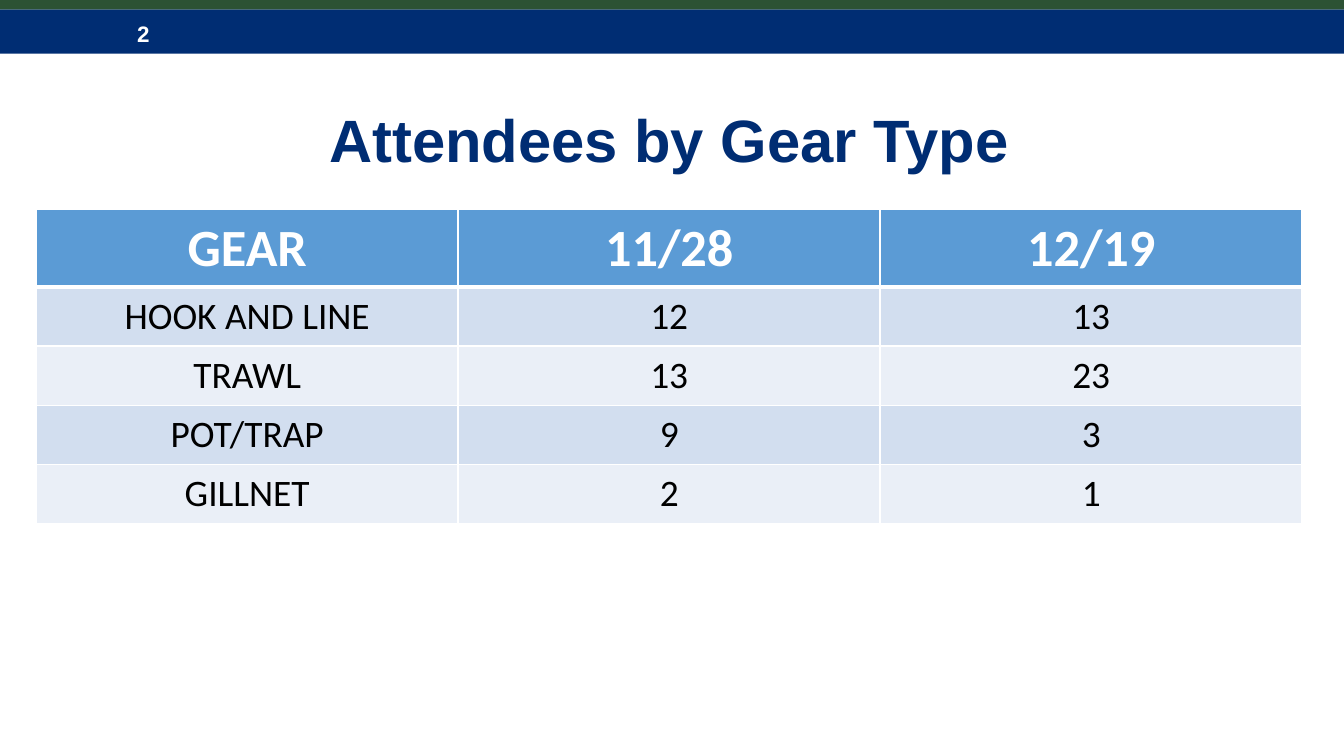
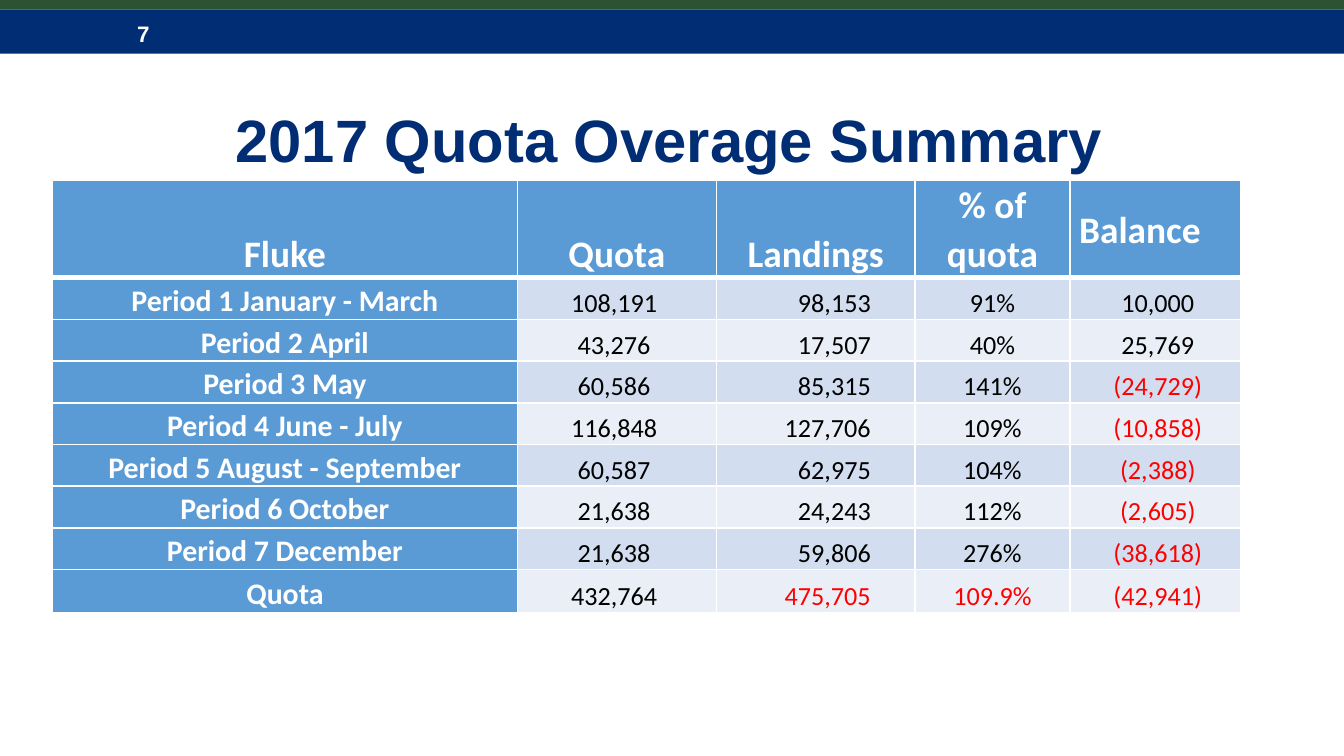
from lxml import etree
from pptx import Presentation
from pptx.dml.color import RGBColor
from pptx.enum import shapes, text
from pptx.oxml import ns
from pptx.util import Inches, Pt

COLORS = {
    "navy": "002D73",
    "green": "2C5234",
    "white": "FFFFFF",
    "black": "000000",
    "red": "FF0000",
    "header": "5B9BD5",
    "band_dark": "D2DEEF",
    "band_light": "EAEFF7",
}
CENTER, LEFT, RIGHT = text.PP_ALIGN.CENTER, text.PP_ALIGN.LEFT, text.PP_ALIGN.RIGHT
TOP, MIDDLE, BOTTOM = (text.MSO_ANCHOR.TOP, text.MSO_ANCHOR.MIDDLE,
                       text.MSO_ANCHOR.BOTTOM)

GEAR_ROWS = [
    ("GEAR", "11/28", "12/19"),
    ("HOOK AND LINE", "12", "13"),
    ("TRAWL", "13", "23"),
    ("POT/TRAP", "9", "3"),
    ("GILLNET", "2", "1"),
]
QUOTA_ROWS = [
    ("Fluke", "Quota", "Landings", "% of quota", "Balance"),
    ("Period 1 January - March", "108,191", "98,153", "91%", "10,000"),
    ("Period 2 April", "43,276", "17,507", "40%", "25,769"),
    ("Period 3 May", "60,586", "85,315", "141%", "(24,729)"),
    ("Period 4 June - July", "116,848", "127,706", "109%", "(10,858)"),
    ("Period 5 August - September", "60,587", "62,975", "104%", "(2,388)"),
    ("Period 6 October", "21,638", "24,243", "112%", "(2,605)"),
    ("Period 7 December", "21,638", "59,806", "276%", "(38,618)"),
    ("Quota", "432,764", "475,705", "109.9%", "(42,941)"),
]
# Left and right cell margins that line up the figures in each column
QUOTA_MARGINS = [(0.07, 0.07), (0.07, 0.11), (0.07, 0.33), (0.07, 0.07), (0.11, 0.07)]


def rgb(name):
    return RGBColor.from_string(COLORS[name])


def style_paragraph(para, font, size, color, bold, align, spacing=None):
    para.alignment = align
    if spacing:
        para.line_spacing = spacing
    for span in para.runs:
        span.font.name = font
        span.font.size = Pt(size)
        span.font.bold = bold
        span.font.color.rgb = rgb(color)


def set_margins(target, left, top, right, bottom):
    target.margin_left, target.margin_top = Inches(left), Inches(top)
    target.margin_right, target.margin_bottom = Inches(right), Inches(bottom)


def add_band(page, top, height, color):
    band = page.shapes.add_shape(shapes.MSO_SHAPE.RECTANGLE, 0, Inches(top),
                                 Inches(10), Inches(height))
    band.shadow.inherit = False
    band.fill.solid()
    band.fill.fore_color.rgb = rgb(color)
    band.line.fill.background()
    return band


def add_page(deck, title, number):
    page = deck.slides.add_slide(deck.slide_layouts[5])

    # Top bands with the page number
    frame = add_band(page, 0.07, 0.33, "navy").text_frame
    set_margins(frame, 1.02, 0.09, 0.3, 0.06)
    frame.vertical_anchor = MIDDLE
    frame.text = number
    style_paragraph(frame.paragraphs[0], "Arial", 12, "white", True, LEFT)
    add_band(page, 0, 0.07, "green")

    # Title
    box = page.shapes.title
    box.left, box.top = Inches(0.27), Inches(0.56)
    box.width, box.height = Inches(9.42), Inches(1.01)
    frame = box.text_frame
    set_margins(frame, 0, 0, 0, 0)
    frame.vertical_anchor = MIDDLE
    frame.text = title
    style_paragraph(frame.paragraphs[0], "Arial", 32, "navy", True, CENTER, 0.9)
    return page


def set_borders(cell, top, bottom):
    properties = cell._tc.get_or_add_tcPr()
    for side, width in (("L", 1), ("R", 1), ("T", top), ("B", bottom)):
        line = etree.SubElement(properties, ns.qn("a:ln" + side), w=str(Pt(width)))
        fill = etree.SubElement(line, ns.qn("a:solidFill"))
        etree.SubElement(fill, ns.qn("a:srgbClr"), val=COLORS["white"])


def fill_cell(cell, row, color):
    set_borders(cell, 3 if row == 1 else 1, 3 if row == 0 else 1)
    cell.fill.solid()
    cell.fill.fore_color.rgb = rgb(color)


def band_color(row):
    return "band_dark" if row % 2 else "band_light"


def add_table(page, rows, left, top, widths, heights):
    frame = page.shapes.add_table(len(rows), len(widths), Inches(left), Inches(top),
                                  Inches(sum(widths)), Inches(sum(heights)))
    table = frame.table
    for column, width in zip(table.columns, widths):
        column.width = Inches(width)
    for line, height in zip(table.rows, heights):
        line.height = Inches(height)
    for r, values in enumerate(rows):
        for c, value in enumerate(values):
            table.cell(r, c).text = value
    return table


def add_gear_table(page):
    table = add_table(page, GEAR_ROWS, 0.27, 1.56, [3.14] * 3, [0.41] * 5)
    for r in range(len(GEAR_ROWS)):
        head = r == 0
        for cell in table.rows[r].cells:
            fill_cell(cell, r, "header" if head else band_color(r))
            cell.vertical_anchor = TOP
            style_paragraph(cell.text_frame.paragraphs[0], "Calibri",
                            28 if head else 20, "white" if head else "black",
                            head, CENTER)


def add_quota_table(page):
    table = add_table(page, QUOTA_ROWS, 0.39, 1.34, [3.46, 1.48, 1.48, 1.15, 1.27],
                      [0.52] + [0.31] * 7 + [0.32])
    last = len(QUOTA_ROWS) - 1
    for r, values in enumerate(QUOTA_ROWS):
        for c, value in enumerate(values):
            cell = table.cell(r, c)
            head = r == 0
            label = head or c == 0
            fill_cell(cell, r, "header" if label else band_color(r))
            left, right = (0.07, 0.07) if head else QUOTA_MARGINS[c]
            set_margins(cell, left, 0, right, 0)
            cell.vertical_anchor = MIDDLE if head and c > 2 else BOTTOM

            # Overages and the overrun totals are red
            over = value.startswith("(") or (r == last and c > 1)
            color = "white" if label else "red" if over else "black"
            size = 20 if head else 16 if label else 14
            align = CENTER
            if head and c == 4:
                align = LEFT
            elif not head and c == 2:
                align = RIGHT
            style_paragraph(cell.text_frame.paragraphs[0], "Calibri", size, color,
                            label, align, 1.07)


def main():
    deck = Presentation()
    # Widescreen, 16 to 9
    deck.slide_width = Inches(10)
    deck.slide_height = deck.slide_width * 9 // 16
    add_gear_table(add_page(deck, "Attendees by Gear Type", "2"))
    add_quota_table(add_page(deck, "2017 Quota Overage Summary", "7"))
    deck.save("out.pptx")


if __name__ == "__main__":
    main()
